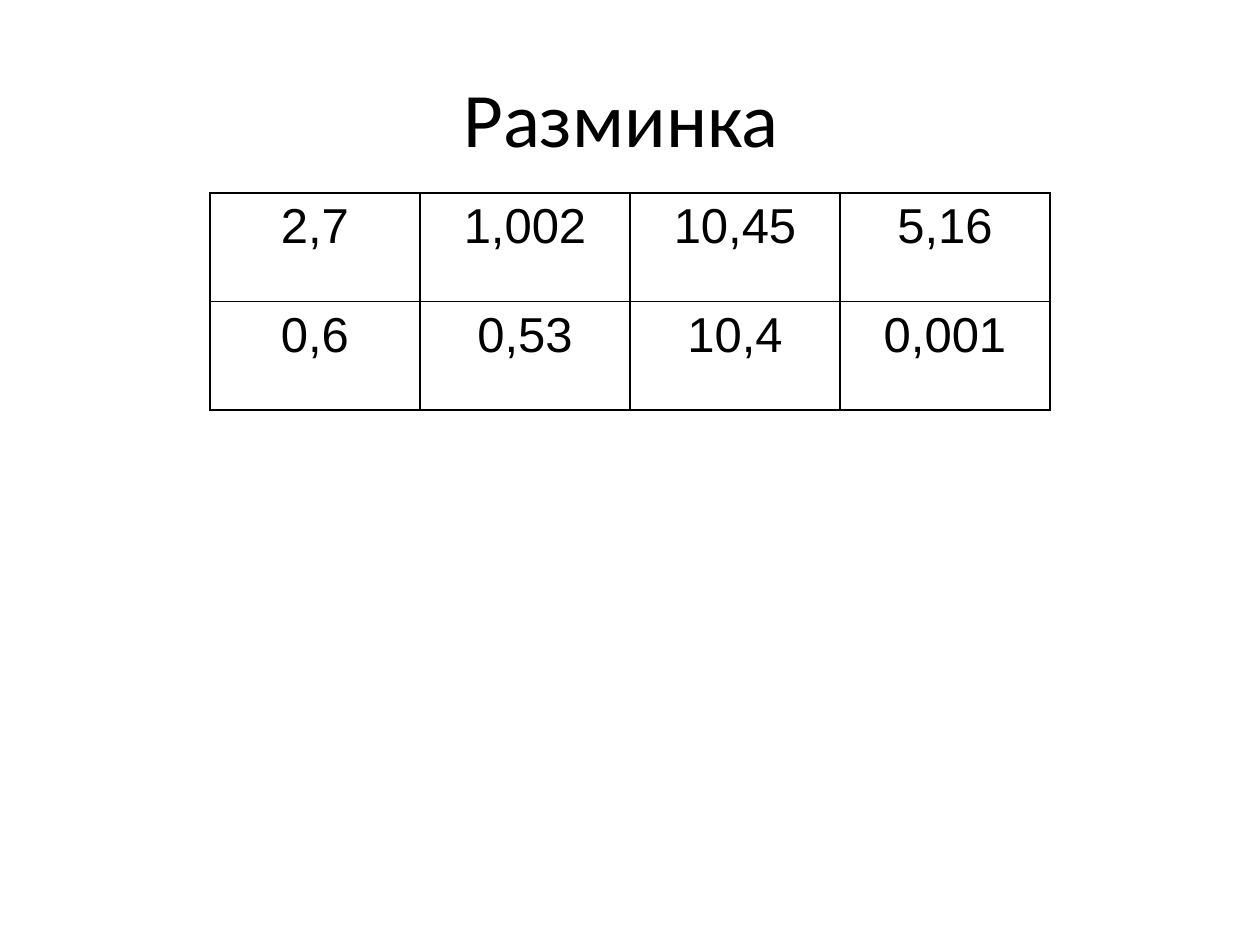
import dataclasses

import pptx
import pptx.dml.color
import pptx.enum.text
import pptx.oxml
import pptx.oxml.ns
import pptx.util

WIDE = pptx.util.Inches(10)
HIGH = pptx.util.Inches(7.5)
INK = "000000"


@dataclasses.dataclass
class Box:
    left: float
    top: float
    width: float
    height: float

    def place(self) -> tuple[int, int, int, int]:
        return (
            round(self.left * WIDE),
            round(self.top * HIGH),
            round(self.width * WIDE),
            round(self.height * HIGH),
        )


@dataclasses.dataclass
class Style:
    face: str
    size: float


HEAD = Style("Calibri", 44)
BODY = Style("Arial", 28)
ROWS = [
    ["2,7", "1,002", "10,45", "5,16"],
    ["0,6", "0,53", "10,4", "0,001"],
]


def tint(code: str) -> pptx.dml.color.RGBColor:
    return pptx.dml.color.RGBColor.from_string(code)


def write(frame, text: str, style: Style) -> None:
    frame.text = text
    para = frame.paragraphs[0]
    para.alignment = pptx.enum.text.PP_ALIGN.CENTER
    para.font.name = style.face
    para.font.size = pptx.util.Pt(style.size)
    para.font.color.rgb = tint(INK)


def frame_cell(cell, points: float) -> None:
    props = cell._tc.get_or_add_tcPr()
    for spot, side in enumerate(("lnL", "lnR", "lnT", "lnB")):
        line = pptx.oxml.parse_xml(
            f'<a:{side} {pptx.oxml.ns.nsdecls("a")} w="{pptx.util.Pt(points)}">'
            f'<a:solidFill><a:srgbClr val="{INK}"/></a:solidFill></a:{side}>'
        )
        props.insert(spot, line)


def draw_title(slide, text: str, box: Box) -> None:
    title = slide.shapes.title
    title.left, title.top, title.width, title.height = box.place()
    write(title.text_frame, text, HEAD)
    title.text_frame.vertical_anchor = pptx.enum.text.MSO_ANCHOR.MIDDLE


def draw_table(slide, rows: list[list[str]], box: Box) -> None:
    table = slide.shapes.add_table(len(rows), len(rows[0]), *box.place()).table
    table.first_row = False
    table.horz_banding = False
    for r, row in enumerate(rows):
        for c, text in enumerate(row):
            cell = table.cell(r, c)
            cell.fill.background()
            write(cell.text_frame, text, BODY)
            frame_cell(cell, 1)


def main() -> None:
    deck = pptx.Presentation()
    deck.slide_width, deck.slide_height = WIDE, HIGH
    slide = deck.slides.add_slide(deck.slide_layouts.get_by_name("Title Only"))
    draw_title(slide, "Разминка ", Box(0.05, 0.04, 0.9, 1 / 6))
    draw_table(slide, ROWS, Box(1 / 6, 0.204, 2 / 3, 0.23))
    deck.save("out.pptx")


if __name__ == "__main__":
    main()
